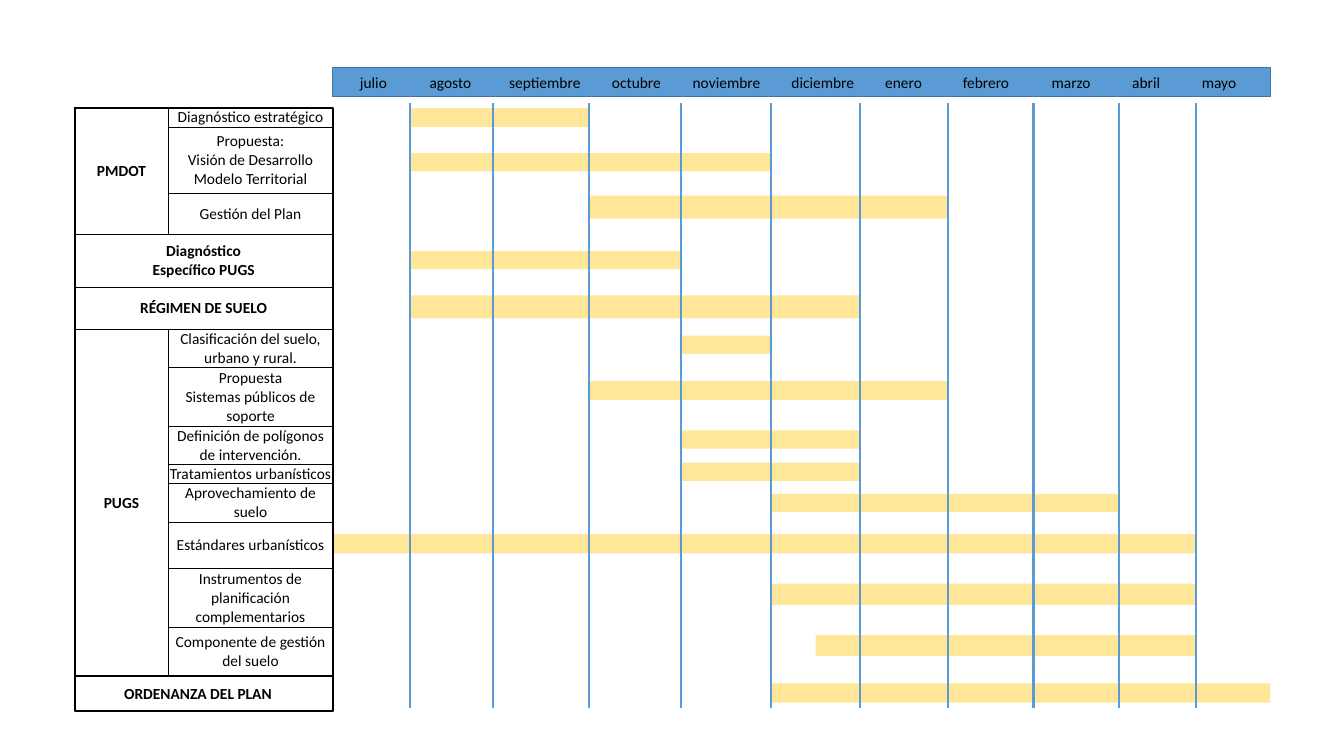
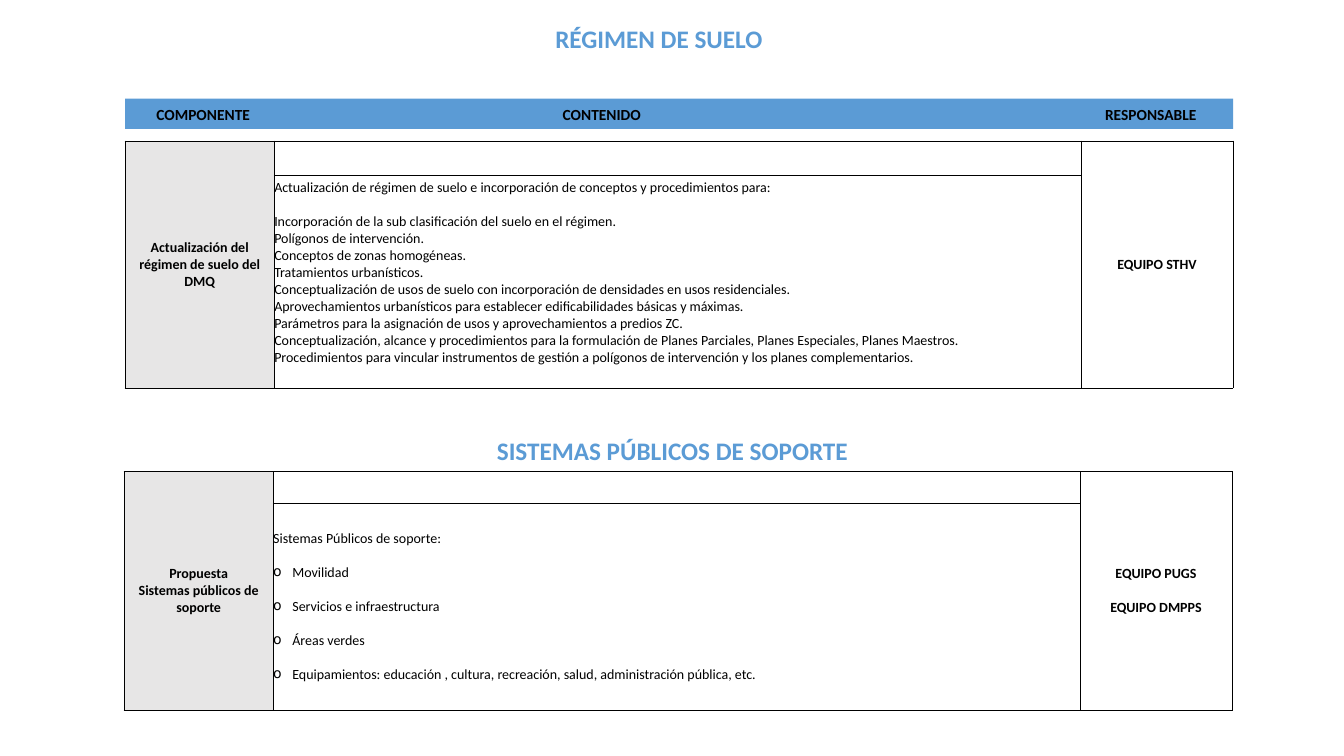
from dataclasses import dataclass
from itertools import groupby

from lxml import etree
from pptx import Presentation
from pptx.dml.color import RGBColor
from pptx.enum.shapes import MSO_CONNECTOR, MSO_SHAPE
from pptx.enum.text import MSO_ANCHOR, PP_ALIGN
from pptx.oxml.ns import qn
from pptx.util import Inches, Pt

RECT, STRAIGHT = MSO_SHAPE.RECTANGLE, MSO_CONNECTOR.STRAIGHT
MIDDLE = MSO_ANCHOR.MIDDLE
LEFT, CENTER = PP_ALIGN.LEFT, PP_ALIGN.CENTER
NO_STYLE = "{2D5ABB26-0587-4C30-8999-92F81FD0307C}"
BLANK = 6


@dataclass(frozen=True)
class Theme:
    font: str = "Calibri"
    blue: str = "5B9BD5"
    dark_blue: str = "43739E"
    amber: str = "FFE699"
    grey: str = "E7E6E6"
    black: str = "000000"
    title: float = 18
    label: float = 11
    body: float = 10
    hairline: float = 0.5
    rule: float = 1
    grid: float = 1.5
    frame: float = 1.5


@dataclass(frozen=True)
class Box:
    left: float
    top: float
    width: float
    height: float

    def emu(self) -> list:
        return [Inches(v) for v in (self.left, self.top, self.width, self.height)]


@dataclass(frozen=True)
class Para:
    text: str
    gap: float = 0
    bullet: bool = False


@dataclass(frozen=True)
class Task:
    """A schedule row; first and last count months, top and thick place its bar."""
    group: str
    label: str
    height: float
    first: float
    last: float
    top: float
    thick: float
    heavy: bool = False


@dataclass(frozen=True)
class Component:
    title: str
    title_box: Box
    table_box: Box
    head_height: float
    name: list
    content: list
    owner: list
    foot: float = 0


T = Theme()
GAP = 12.2
SIDE = 0.08
ZERO = dict(margin_left=0, margin_top=0, margin_right=0, margin_bottom=0)

MONTHS = ["julio", "agosto", "septiembre", "octubre", "noviembre", "diciembre",
          "enero", "febrero", "marzo", "abril", "mayo"]
MONTH_TEXT = [3.57, 4.26, 5.05, 6.07, 6.87, 7.85, 8.78, 9.55, 10.43, 11.23, 11.92]
MONTH_EDGES = [3.3, 4.07, 4.89, 5.84, 6.75, 7.65, 8.53, 9.4, 10.25, 11.1, 11.86, 12.6]
GRID_TOP, GRID_BOTTOM = 1.02, 7.02
FRAME = Box(0.74, 1.07, 2.56, 5.98)
ORDINANCE_TOP = 6.71
TASK_COLS = [0.93, 1.63]

TASKS = [
    Task("PMDOT", "Diagnóstico estratégico", 0.19, 1, 3, 1.07, 0.19, True),
    Task("PMDOT", "Propuesta:\nVisión de Desarrollo\nModelo Territorial", 0.66, 1, 5, 1.52, 0.18),
    Task("PMDOT", "Gestión del Plan", 0.41, 3, 7, 1.94, 0.23),
    Task("Diagnóstico\nEspecífico PUGS", "", 0.52, 1, 4, 2.49, 0.18, True),
    Task("RÉGIMEN DE SUELO", "", 0.42, 1, 6, 2.93, 0.23, True),
    Task("PUGS", "Clasificación del suelo, urbano y rural.", 0.38, 4, 5, 3.33, 0.18, True),
    Task("PUGS", "Propuesta\nSistemas públicos de soporte", 0.58, 3, 7, 3.78, 0.19),
    Task("PUGS", "Definición de polígonos de intervención.", 0.38, 4, 6, 4.27, 0.18, True),
    Task("PUGS", "Tratamientos urbanísticos", 0.19, 4, 6, 4.59, 0.18),
    Task("PUGS", "Aprovechamiento de suelo", 0.38, 5, 9, 4.9, 0.18),
    Task("PUGS", "Estándares urbanísticos", 0.46, 0, 10, 5.3, 0.19),
    Task("PUGS", "Instrumentos de planificación complementarios", 0.59, 5, 10, 5.79, 0.21, True),
    Task("PUGS", "Componente de gestión del suelo", 0.48, 5.5, 10, 6.3, 0.21, True),
]
ORDINANCE = Task("", "ORDENANZA DEL PLAN", 0.34, 5, 11, 6.78, 0.19)

COMPONENT_COLS = [1.48, 8, 1.51]
HEADINGS = ["COMPONENTE", "CONTENIDO", "RESPONSABLE"]
HEADING_TEXT = [1.55, 5.58, 10.96]
RULES = [
    "Incorporación de la sub clasificación del suelo en el régimen.",
    "Polígonos de intervención.",
    "Conceptos de zonas homogéneas.",
    "Tratamientos urbanísticos.",
    "Conceptualización de usos de suelo con incorporación de densidades en usos residenciales.",
    "Aprovechamientos urbanísticos para establecer edificabilidades básicas y máximas.",
    "Parámetros para la asignación de usos y aprovechamientos a predios ZC.",
    "Conceptualización, alcance y procedimientos para la formulación de Planes Parciales, "
    "Planes Especiales, Planes Maestros.",
    "Procedimientos para vincular instrumentos de gestión a polígonos de intervención y "
    "los planes complementarios.",
]
SYSTEMS = [
    "Movilidad", "Servicios e infraestructura", "Áreas verdes",
    "Equipamientos: educación , cultura, recreación, salud, administración pública, etc.",
]
COMPONENTS = [
    Component(
        "RÉGIMEN DE SUELO", Box(1.54, 0.18, 9.99, 0.4), Box(1.24, 1.4, 10.99, 2.45), 0.34,
        [Para("Actualización del régimen de suelo del DMQ")],
        [Para("Actualización de régimen de suelo e incorporación de conceptos y "
              "procedimientos para:")]
        + [Para(rule, 0 if i else GAP) for i, rule in enumerate(RULES)],
        [Para("EQUIPO STHV")], foot=0.17),
    Component(
        "SISTEMAS PÚBLICOS DE SOPORTE", Box(4.67, 4.27, 4, 0.4), Box(1.23, 4.68, 10.99, 2.37),
        0.31,
        [Para("Propuesta"), Para("Sistemas públicos de soporte")],
        [Para("Sistemas Públicos de soporte:")] + [Para(s, GAP, True) for s in SYSTEMS],
        [Para("EQUIPO PUGS"), Para("EQUIPO DMPPS", GAP)]),
]


def rgb(value: str) -> RGBColor:
    return RGBColor.from_string(value)


def apply(target, formats: dict) -> None:
    for name, value in formats.items():
        setattr(target, name, value)


def write(tf, paras: list, size: float, bold=False, align=CENTER, color=T.black) -> None:
    for i, para in enumerate(paras):
        p = tf.paragraphs[0] if i == 0 else tf.add_paragraph()
        p.text = para.text
        apply(p, dict(alignment=align, space_before=Pt(para.gap)))
        if para.bullet:
            pPr = p._p.get_or_add_pPr()
            pPr.set("marL", str(Inches(0.19)))
            pPr.set("indent", str(-Inches(0.19)))
            etree.SubElement(pPr, qn("a:buChar")).set("char", "o")
        for r in p.runs:
            apply(r.font, dict(name=T.font, size=Pt(size), bold=bold))
            r.font.color.rgb = rgb(color)


def add_rect(slide, box: Box, fill="", line="", weight=T.rule):
    sp = slide.shapes.add_shape(RECT, *box.emu())
    sp.shadow.inherit = False
    if fill:
        sp.fill.solid()
        sp.fill.fore_color.rgb = rgb(fill)
    else:
        sp.fill.background()
    if line:
        sp.line.color.rgb = rgb(line)
        sp.line.width = Pt(weight)
    else:
        sp.line.fill.background()
    return sp


def add_line(slide, x1: float, y1: float, x2: float, y2: float, color: str, weight: float) -> None:
    s = slide.shapes.add_connector(STRAIGHT, *[Inches(v) for v in (x1, y1, x2, y2)])
    s.line.color.rgb = rgb(color)
    s.line.width = Pt(weight)
    etree.SubElement(s._element.spPr, qn("a:effectLst"))


def add_text(slide, box: Box, text: str, size: float, color: str) -> None:
    tf = slide.shapes.add_textbox(*box.emu()).text_frame
    apply(tf, dict(word_wrap=True, vertical_anchor=MIDDLE))
    write(tf, [Para(text)], size, True, color=color)


def add_band(slide, box: Box, labels: list, starts: list, bold=False, line="") -> None:
    """Draw a heading band whose labels begin at the given slide positions."""
    tf = add_rect(slide, box, T.blue, line).text_frame
    apply(tf, ZERO | dict(margin_left=Inches(starts[0] - box.left), word_wrap=True,
                          vertical_anchor=MIDDLE))
    write(tf, [Para("\t".join(labels))], T.label, bold, LEFT)
    tabs = etree.SubElement(tf.paragraphs[0]._p.get_or_add_pPr(), qn("a:tabLst"))
    for start in starts[1:]:
        tab = etree.SubElement(tabs, qn("a:tab"))
        tab.set("pos", str(Inches(start - starts[0])))
        tab.set("algn", "l")


def add_grid(slide, box: Box, cols: list, rows: list):
    """Add an unstyled table with the given column widths and row heights."""
    table = slide.shapes.add_table(len(rows), len(cols), *box.emu()).table
    apply(table, dict(first_row=False, horz_banding=False))
    table._tbl.tblPr.find(qn("a:tableStyleId")).text = NO_STYLE
    for col, width in zip(table.columns, cols):
        col.width = Inches(width)
    for row, height in zip(table.rows, rows):
        row.height = Inches(height)
    return table


def set_cell(cell, paras: list, size: float, bold=False, align=CENTER, fill="",
             top=T.hairline, bottom=T.hairline, side=0.0, foot=0.0) -> None:
    apply(cell, ZERO | dict(margin_left=Inches(side), margin_right=Inches(side),
                            margin_bottom=Inches(foot), vertical_anchor=MIDDLE))
    write(cell.text_frame, paras, size, bold, align)
    tcPr = cell._tc.get_or_add_tcPr()
    edges = {"a:lnL": T.hairline, "a:lnR": T.hairline, "a:lnT": top, "a:lnB": bottom}
    for tag, weight in edges.items():
        ln = etree.SubElement(tcPr, qn(tag))
        ln.set("w", str(Pt(weight)))
        solid = etree.SubElement(ln, qn("a:solidFill"))
        etree.SubElement(solid, qn("a:srgbClr")).set("val", T.black)
    if fill:
        cell.fill.solid()
        cell.fill.fore_color.rgb = rgb(fill)
    else:
        cell.fill.background()


def month_x(month: float) -> float:
    i = min(int(month), len(MONTHS) - 1)
    return MONTH_EDGES[i] + (month - i) * (MONTH_EDGES[i + 1] - MONTH_EDGES[i])


def add_task_table(slide) -> None:
    heights = [task.height for task in TASKS]
    box = Box(FRAME.left, FRAME.top, sum(TASK_COLS), sum(heights))
    table = add_grid(slide, box, TASK_COLS, heights)
    edges = [T.rule if task.heavy else T.hairline for task in TASKS] + [T.rule]
    start = 0
    for group, members in groupby(TASKS, key=lambda task: task.group):
        tasks = list(members)
        end = start + len(tasks)
        table.cell(start, 0).merge(table.cell(end - 1, 0 if tasks[0].label else 1))
        set_cell(table.cell(start, 0), [Para(group)], T.label, True,
                 top=edges[start], bottom=edges[end])
        for i, task in enumerate(tasks, start):
            if task.label:
                set_cell(table.cell(i, 1), [Para(task.label)], T.label,
                         top=edges[i], bottom=edges[i + 1])
        start = end


def build_schedule(slide) -> None:
    for task in TASKS + [ORDINANCE]:
        left = month_x(task.first)
        add_rect(slide, Box(left, task.top, month_x(task.last) - left, task.thick), T.amber)
    add_band(slide, Box(MONTH_EDGES[0], 0.67, MONTH_EDGES[-1] - MONTH_EDGES[0], 0.29),
             MONTHS, MONTH_TEXT, line=T.dark_blue)
    add_task_table(slide)
    add_rect(slide, FRAME, line=T.black, weight=T.frame)
    add_line(slide, FRAME.left, ORDINANCE_TOP, FRAME.left + FRAME.width, ORDINANCE_TOP,
             T.black, T.frame)
    add_text(slide, Box(0.88, ORDINANCE_TOP, 2.17, ORDINANCE.height), ORDINANCE.label,
             T.label, T.black)
    for x in MONTH_EDGES[1:-1]:
        add_line(slide, x, GRID_TOP, x, GRID_BOTTOM, T.blue, T.grid)


def add_component(slide, item: Component) -> None:
    add_text(slide, item.title_box, item.title, T.title, T.blue)
    rows = [item.head_height, item.table_box.height - item.head_height]
    table = add_grid(slide, item.table_box, COMPONENT_COLS, rows)
    for col, paras, fill in ((0, item.name, T.grey), (2, item.owner, "")):
        table.cell(0, col).merge(table.cell(1, col))
        set_cell(table.cell(0, col), paras, T.body, True, fill=fill, top=T.rule, side=SIDE)
    set_cell(table.cell(0, 1), [], T.body, top=T.rule)
    set_cell(table.cell(1, 1), item.content, T.body, align=LEFT, foot=item.foot)


def build_components(slide) -> None:
    add_band(slide, Box(1.24, 0.98, 10.99, 0.3), HEADINGS, HEADING_TEXT, bold=True)
    for item in COMPONENTS:
        add_component(slide, item)


def main() -> None:
    prs = Presentation()
    apply(prs, dict(slide_width=Inches(13.33), slide_height=Inches(7.5)))
    for build in (build_schedule, build_components):
        build(prs.slides.add_slide(prs.slide_layouts[BLANK]))
    prs.save("out.pptx")


if __name__ == "__main__":
    main()
